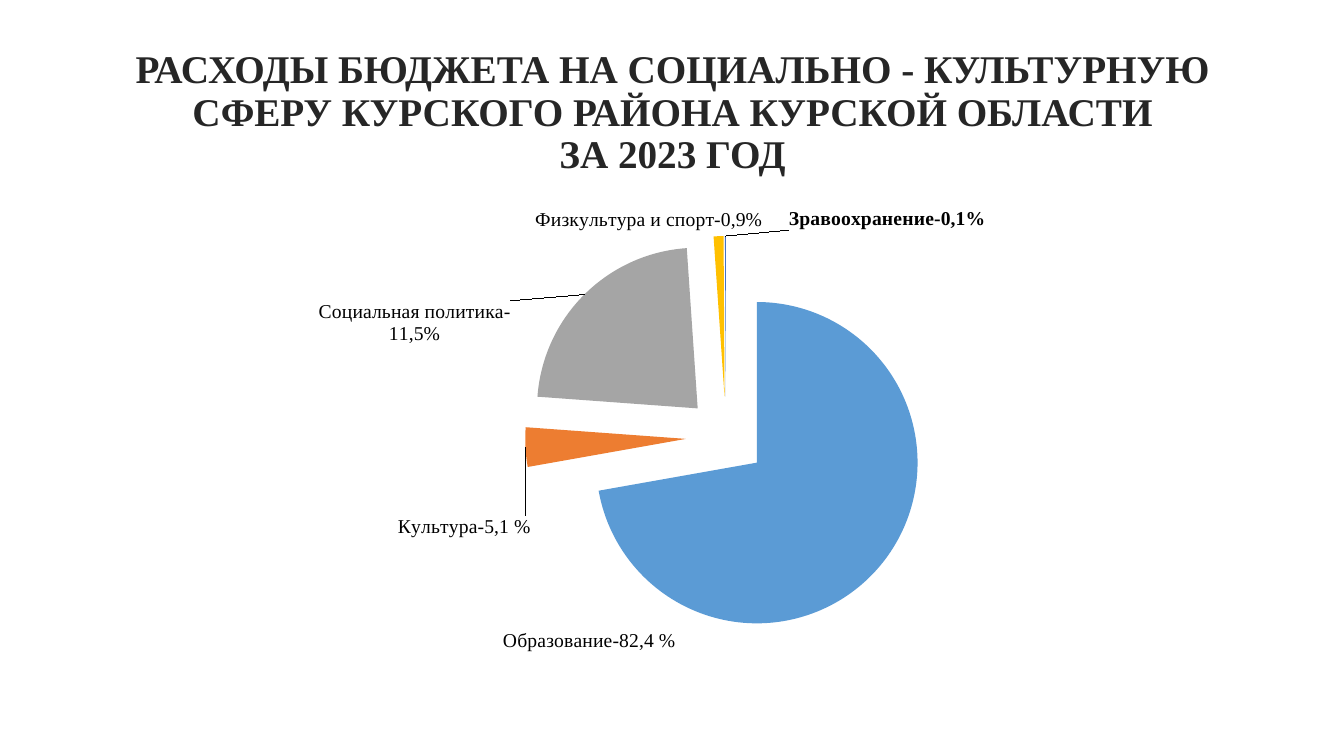
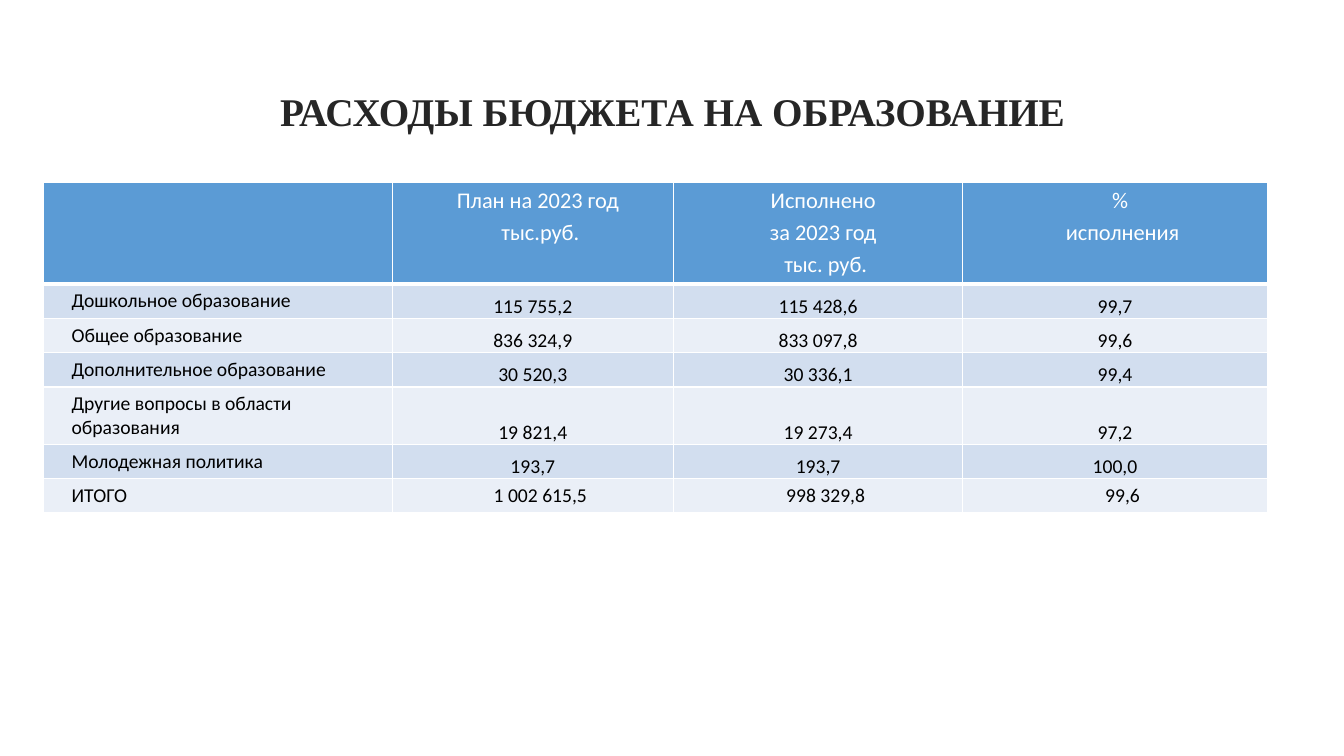
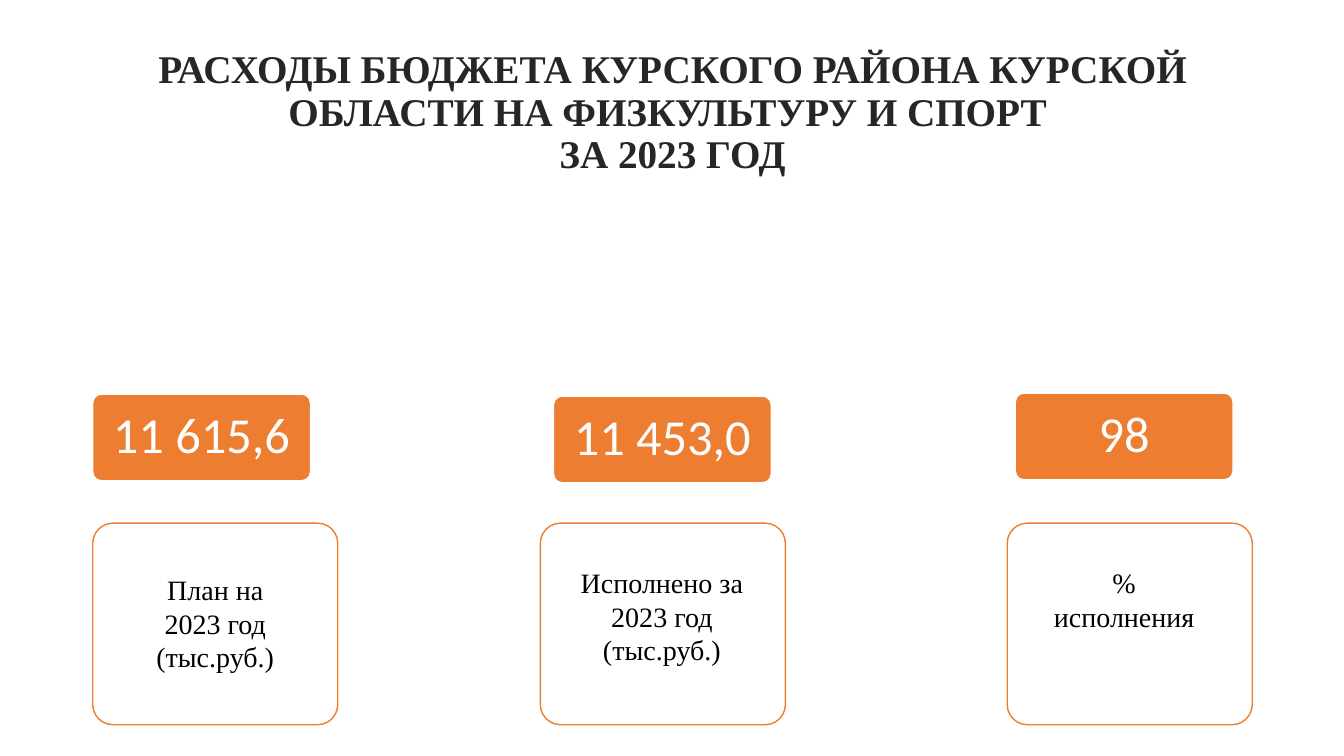
from lxml import etree
from pptx import Presentation
from pptx.chart.data import CategoryChartData
from pptx.dml.color import RGBColor
from pptx.enum.chart import XL_CHART_TYPE, XL_LABEL_POSITION
from pptx.enum.shapes import MSO_SHAPE
from pptx.enum.text import MSO_ANCHOR, PP_ALIGN
from pptx.oxml import parse_xml
from pptx.oxml.ns import nsdecls, qn
from pptx.util import Inches, Pt

PIE = XL_CHART_TYPE.PIE
OUTSIDE = XL_LABEL_POSITION.OUTSIDE_END
ROUNDED = MSO_SHAPE.ROUNDED_RECTANGLE
TOP, MIDDLE, BOTTOM = MSO_ANCHOR.TOP, MSO_ANCHOR.MIDDLE, MSO_ANCHOR.BOTTOM
LEFT, CENTER = PP_ALIGN.LEFT, PP_ALIGN.CENTER

SERIF, SANS = "Times New Roman", "Calibri"
INK = RGBColor(0x26, 0x26, 0x26)
BLACK = RGBColor(0, 0, 0)
WHITE = RGBColor(0xFF, 0xFF, 0xFF)
BLUE = RGBColor(0x5B, 0x9B, 0xD5)
ORANGE = RGBColor(0xED, 0x7D, 0x31)
GRAY = RGBColor(0xA5, 0xA5, 0xA5)
GOLD = RGBColor(0xFF, 0xC0, 0x00)
INDIGO = RGBColor(0x44, 0x72, 0xC4)
BAND_DARK = RGBColor(0xD2, 0xDE, 0xEF)
BAND_LIGHT = RGBColor(0xEA, 0xEF, 0xF7)

deck = Presentation()
deck.slide_width, deck.slide_height = Inches(13.33), Inches(7.5)
blank = deck.slide_layouts[6]


def write(frame, lines, size, font, color, bold=False, align=CENTER):
    """Fill a text frame with one paragraph a line; a newline breaks a line."""
    frame.word_wrap = True
    for number, line in enumerate(lines):
        para = frame.paragraphs[0] if number == 0 else frame.add_paragraph()
        para.alignment = align
        for part_number, part in enumerate(line.split("\n")):
            if part_number:
                para.add_line_break()
            span = para.add_run()
            span.text = part
            span.font.size, span.font.name = Pt(size), font
            span.font.bold, span.font.color.rgb = bold, color


def manual_layout(x, y, extra=""):
    return parse_xml(
        f'<c:layout {nsdecls("c")}><c:manualLayout>{extra}'
        f'<c:x val="{x}"/><c:y val="{y}"/></c:manualLayout></c:layout>')


# Pages and titles
titles = [
    "РАСХОДЫ БЮДЖЕТА НА СОЦИАЛЬНО - КУЛЬТУРНУЮ СФЕРУ КУРСКОГО РАЙОНА "
    "КУРСКОЙ ОБЛАСТИ\nЗА 2023 ГОД",
    "РАСХОДЫ БЮДЖЕТА НА ОБРАЗОВАНИЕ",
    "РАСХОДЫ БЮДЖЕТА КУРСКОГО РАЙОНА КУРСКОЙ ОБЛАСТИ НА ФИЗКУЛЬТУРУ И СПОРТ "
    "\nЗА 2023 ГОД",
]
pages = []
for title in titles:
    page = deck.slides.add_slide(blank)
    box = page.shapes.add_textbox(Inches(0.92), Inches(0.4), Inches(11.5), Inches(1.45))
    box.text_frame.vertical_anchor = MIDDLE
    write(box.text_frame, [title], 28, SERIF, INK, bold=True)
    box.text_frame.paragraphs[0].line_spacing = 0.9
    pages.append(page)
chart_page, table_page, sport_page = pages

# Spending pie: label, value, colour, label shift as a share of the chart
slices = [
    ("Образование-82,4 %", 73, BLUE, (-0.33, 0.12)),
    ("Культура-5,1 %", 4, ORANGE, (0.01, 0.16)),
    ("Социальная политика- 11,5%", 23, GRAY, (-0.06, 0.11)),
    ("Физкультура и спорт-0,9%", 1, GOLD, (-0.06, 0)),
    ("Зравоохранение-0,1%", 0.1, INDIGO, (0.14, 0)),
]
data = CategoryChartData()
data.categories = [label for label, *_ in slices]
data.add_series("Расходы", [value for _, value, *_ in slices])
chart = chart_page.shapes.add_chart(
    PIE, Inches(1.18), Inches(1.85), Inches(11.47), Inches(4.92), data).chart
chart.has_title = chart.has_legend = False
chart.font.size, chart.font.name = Pt(14), SERIF
chart.font.color.rgb = BLACK

plot = chart.plots[0]
plot.vary_by_categories = True
series = plot.series[0]
labels = series.data_labels
labels.show_category_name, labels.show_value = True, False
labels.position = OUTSIDE
for number, (_, _, color, _) in enumerate(slices):
    point = series.points[number]
    point.format.fill.solid()
    point.format.fill.fore_color.rgb = color
    point.format.line.fill.background()
    label = point.data_label
    label.position = OUTSIDE
    label.font.size, label.font.name = Pt(14), SERIF
    label.font.color.rgb = BLACK
    label.font.bold = number == len(slices) - 1

ser = series._element
ser.find(qn("c:dPt")).addprevious(
    parse_xml(f'<c:explosion {nsdecls("c")} val="25"/>'))
for element, (*_, shift) in zip(ser.iter(qn("c:dLbl")), slices):
    element.find(qn("c:showCatName")).set("val", "1")
    element.find(qn("c:showVal")).set("val", "0")
    element.find(qn("c:showPercent")).set("val", "0")
    element.find(qn("c:idx")).addnext(manual_layout(*shift))
label_group = ser.find(qn("c:dLbls"))
leader = label_group.find(qn("c:showLeaderLines"))
if leader is None:
    leader = etree.SubElement(label_group, qn("c:showLeaderLines"))
leader.set("val", "1")

plot_area = chart._chartSpace.chart.plotArea
for old in plot_area.findall(qn("c:layout")):
    plot_area.remove(old)
area = manual_layout(
    0.35, 0.1,
    '<c:layoutTarget val="inner"/><c:xMode val="edge"/><c:yMode val="edge"/>')
for tag, share in (("c:w", 0.35), ("c:h", 0.81)):
    etree.SubElement(area[0], qn(tag)).set("val", str(share))
plot_area.insert(0, area)

# Education table
rows = [
    ("", "План на 2023 год \nтыс.руб.", "Исполнено \nза 2023 год \nтыс. руб.",
     "% \nисполнения"),
    ("Дошкольное образование", "115 755,2", "115 428,6", "99,7"),
    ("Общее образование", "836 324,9", "833 097,8", "99,6"),
    ("Дополнительное образование", "30 520,3", "30 336,1", "99,4"),
    ("Другие вопросы в области образования", "19 821,4", "19 273,4", "97,2"),
    ("Молодежная политика", "193,7", "193,7", "100,0"),
    ("ИТОГО", "1 002 615,5", "998 329,8", "99,6"),
]
widths = [3.46, 2.79, 2.87, 3.02]
heights = [1.01, 0.34, 0.34, 0.34, 0.57, 0.34, 0.34]
table = table_page.shapes.add_table(
    len(rows), len(widths), Inches(0.43), Inches(1.81),
    Inches(sum(widths)), Inches(sum(heights))).table
table.first_row = table.horz_banding = False
for column, width in zip(table.columns, widths):
    column.width = Inches(width)
for row, height in zip(table.rows, heights):
    row.height = Inches(height)

last = len(rows) - 1
for row_number, texts in enumerate(rows):
    header = row_number == 0
    size = 16 if header else 14
    for column_number, text in enumerate(texts):
        cell = table.cell(row_number, column_number)
        figure = column_number > 0 and 0 < row_number < last
        insets = (0.01, 0.01, 0.01, 0) if figure else (0.13, 0.05, 0.13, 0.05)
        (cell.margin_left, cell.margin_top,
         cell.margin_right, cell.margin_bottom) = map(Inches, insets)
        cell.vertical_anchor = BOTTOM if figure else TOP
        if text:
            write(cell.text_frame, text.split("\n"), size, SANS,
                  WHITE if header else BLACK,
                  align=CENTER if column_number else LEFT)
        if text and not figure:
            for para in cell.text_frame.paragraphs:
                para.space_before = Pt(size * 0.2)
                properties = para._p.get_or_add_pPr()
                properties.set("marL", str(Inches(0.15)))
                properties.set("indent", "0")
        cell_properties = cell._tc.get_or_add_tcPr()
        for side in ("lnL", "lnR", "lnT", "lnB"):
            weight = 3 if header and side == "lnB" else 1
            cell_properties.append(parse_xml(
                f'<a:{side} {nsdecls("a")} w="{Pt(weight)}"><a:solidFill>'
                f'<a:srgbClr val="{WHITE}"/></a:solidFill></a:{side}>'))
        cell.fill.solid()
        cell.fill.fore_color.rgb = (
            BLUE if header else BAND_DARK if row_number % 2 else BAND_LIGHT)

# Sport figures: card left, caption box, caption lines, badge place, number
figures = [
    (0.92, (1.45, 5.63, 1.37), ["План на", "2023 год (тыс.руб.)"],
     (0.92, 3.91), "11 615,6"),
    (5.36, (5.36, 5.56, 2.41), ["Исполнено за", "2023 год", "(тыс.руб.)"],
     (5.49, 3.93), "11 453,0"),
    (9.99, (10.03, 5.56, 2.24), ["%", "исполнения"], (10.07, 3.9), "98"),
]
for card_left, (left, top, width), caption, badge_place, number in figures:
    card = (card_left, 5.19, 2.43, 2, WHITE, ORANGE)
    badge = (*badge_place, 2.16, 0.86, ORANGE, WHITE)
    for x, y, w, h, fill, line in (card, badge):
        shape = sport_page.shapes.add_shape(
            ROUNDED, Inches(x), Inches(y), Inches(w), Inches(h))
        shape.adjustments[0] = 0.1
        shape.shadow.inherit = False
        shape.fill.solid()
        shape.fill.fore_color.rgb = fill
        shape.line.color.rgb, shape.line.width = line, Pt(1)
        if fill == WHITE:
            tint = shape._element.spPr.find(qn("a:solidFill"))[0]
            etree.SubElement(tint, qn("a:alpha")).set("val", "90000")
        else:
            frame = shape.text_frame
            frame.margin_left = frame.margin_right = Inches(0.07)
            frame.vertical_anchor = MIDDLE
            write(frame, [number], 36, SANS, WHITE)
            frame.paragraphs[0].line_spacing = 0.9
    box = sport_page.shapes.add_textbox(
        Inches(left), Inches(top), Inches(width), Inches(1.11))
    write(box.text_frame, caption, 20, SERIF, BLACK)

deck.save("out.pptx")
